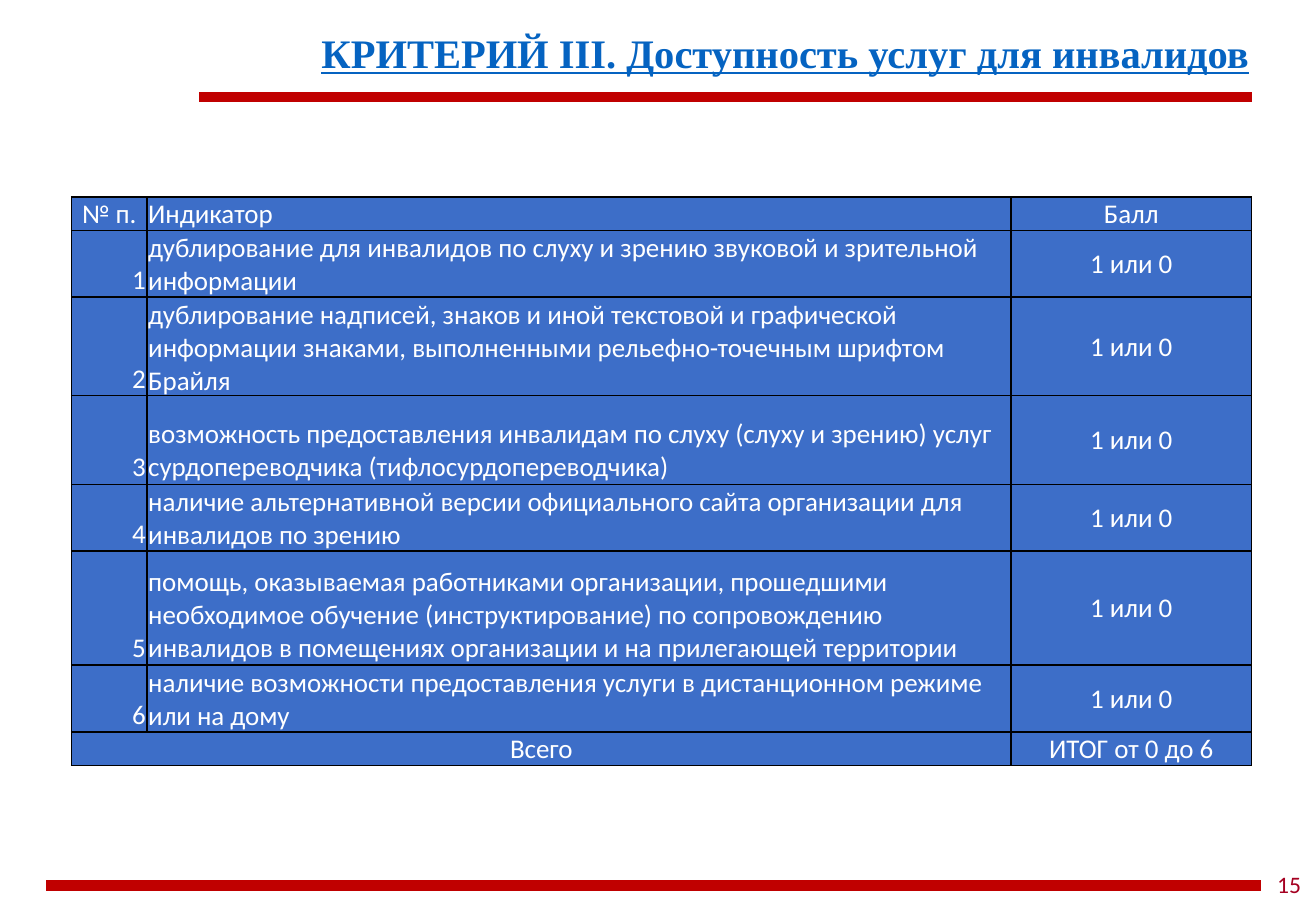
from dataclasses import dataclass

from lxml.etree import SubElement
from pptx import Presentation
from pptx.dml.color import RGBColor
from pptx.enum.shapes import MSO_CONNECTOR as Connector
from pptx.enum.text import MSO_ANCHOR as Anchor, PP_ALIGN as Align
from pptx.oxml.ns import qn
from pptx.util import Emu, Pt

PX = 9144
COLORS = {
    "rule": "C00000",
    "title": "0563C1",
    "page": "A50021",
    "cell": "3D6EC8",
    "cell_text": "FFFFFF",
    "border": "000000",
}


@dataclass(frozen=True)
class Rule:
    left: int
    right: int
    y: int


@dataclass(frozen=True)
class Style:
    font: str
    size: int
    color: str
    bold: bool = False
    underline: bool = False


@dataclass(frozen=True)
class Row:
    height: int
    texts: tuple[str, str, str]


@dataclass(frozen=True)
class Column:
    width: int
    align: Align
    anchor: Anchor


RULES = (Rule(164, 1030, 80), Rule(38, 1038, 729))
TITLE_STYLE = Style("Times New Roman", 24, "title", bold=True, underline=True)
PAGE_STYLE = Style("Calibri", 14, "page")
CELL_STYLE = Style("Calibri", 16, "cell_text")
COLUMNS = (
    Column(62, Align.RIGHT, Anchor.BOTTOM),
    Column(711, Align.LEFT, Anchor.BOTTOM),
    Column(198, Align.CENTER, Anchor.MIDDLE),
)
INDICATORS = (
    (55, "дублирование для инвалидов по слуху и зрению звуковой и зрительной информации"),
    (73, "дублирование надписей, знаков и иной текстовой и графической информации знаками, "
         "выполненными рельефно-точечным шрифтом Брайля"),
    (73, "возможность предоставления инвалидам по слуху (слуху и зрению) услуг "
         "сурдопереводчика (тифлосурдопереводчика)"),
    (55, "наличие альтернативной версии официального сайта организации для инвалидов по зрению"),
    (94, "помощь, оказываемая работниками организации, прошедшими необходимое обучение "
         "(инструктирование) по сопровождению инвалидов в помещениях организации и на "
         "прилегающей территории"),
    (55, "наличие возможности предоставления услуги в дистанционном режиме или на дому"),
)
ROWS = (
    Row(24, ("№ п.", "Индикатор", "Балл")),
    *(Row(height, (str(number), indicator, "1 или 0"))
      for number, (height, indicator) in enumerate(INDICATORS, 1)),
    Row(24, ("Всего", "", "ИТОГ от 0 до 6")),
)


def px(length: int) -> Emu:
    return Emu(length * PX)


def rgb(name: str) -> RGBColor:
    return RGBColor.from_string(COLORS[name])


def write(frame, text: str, style: Style, align: Align) -> None:
    frame.text = text
    paragraph = frame.paragraphs[0]
    paragraph.alignment = align
    for run in paragraph.runs:
        run.font.name = style.font
        run.font.size = Pt(style.size)
        run.font.color.rgb = rgb(style.color)
        run.font.bold = style.bold
        run.font.underline = style.underline


def draw_rule(slide, rule: Rule) -> None:
    line = slide.shapes.add_connector(
        Connector.STRAIGHT, px(rule.left), px(rule.y), px(rule.right), px(rule.y))
    line.line.color.rgb = rgb("rule")
    line.line.width = Pt(6)
    SubElement(line._element.spPr, qn("a:effectLst"))


def draw_title(slide) -> None:
    title = slide.shapes.title
    title.left, title.top, title.width, title.height = map(px, (227, 18, 811, 50))
    title.text_frame.word_wrap = True
    title.text_frame.vertical_anchor = Anchor.TOP
    write(title.text_frame, "КРИТЕРИЙ III. Доступность услуг для инвалидов", TITLE_STYLE, Align.RIGHT)


def draw_page_number(slide) -> None:
    page = slide.shapes.add_textbox(*map(px, (1038, 706, 46, 44))).text_frame
    page.word_wrap = True
    page.vertical_anchor = Anchor.MIDDLE
    write(page, "15", PAGE_STYLE, Align.CENTER)


def style_cell(cell) -> None:
    cell.margin_left = cell.margin_right = cell.margin_top = px(1)
    cell.margin_bottom = 0
    properties = cell._tc.get_or_add_tcPr()
    for side in ("a:lnL", "a:lnR", "a:lnT", "a:lnB"):
        border = SubElement(properties, qn(side), w=str(Pt(1)))
        fill = SubElement(border, qn("a:solidFill"))
        SubElement(fill, qn("a:srgbClr"), val=COLORS["border"])
    cell.fill.solid()
    cell.fill.fore_color.rgb = rgb("cell")


def draw_criteria(slide) -> None:
    width = sum(column.width for column in COLUMNS)
    height = sum(row.height for row in ROWS)
    criteria = slide.shapes.add_table(
        len(ROWS), len(COLUMNS), px(59), px(162), px(width), px(height)).table
    criteria.first_row = False
    criteria.horz_banding = False
    for index, column in enumerate(COLUMNS):
        criteria.columns[index].width = px(column.width)
    last = len(ROWS) - 1
    for r, row in enumerate(ROWS):
        criteria.rows[r].height = px(row.height)
        for c, (column, text) in enumerate(zip(COLUMNS, row.texts)):
            cell = criteria.cell(r, c)
            outer = r in (0, last)
            style_cell(cell)
            cell.vertical_anchor = Anchor.MIDDLE if outer else column.anchor
            align = Align.CENTER if outer and c == 0 else column.align
            write(cell.text_frame, text, CELL_STYLE, align)
    criteria.cell(last, 0).merge(criteria.cell(last, 1))


def main() -> None:
    deck = Presentation()
    deck.slide_width, deck.slide_height = px(1083), px(750)
    slide = deck.slides.add_slide(deck.slide_layouts[5])
    for rule in RULES:
        draw_rule(slide, rule)
    draw_title(slide)
    draw_page_number(slide)
    draw_criteria(slide)
    deck.save("out.pptx")


if __name__ == "__main__":
    main()
